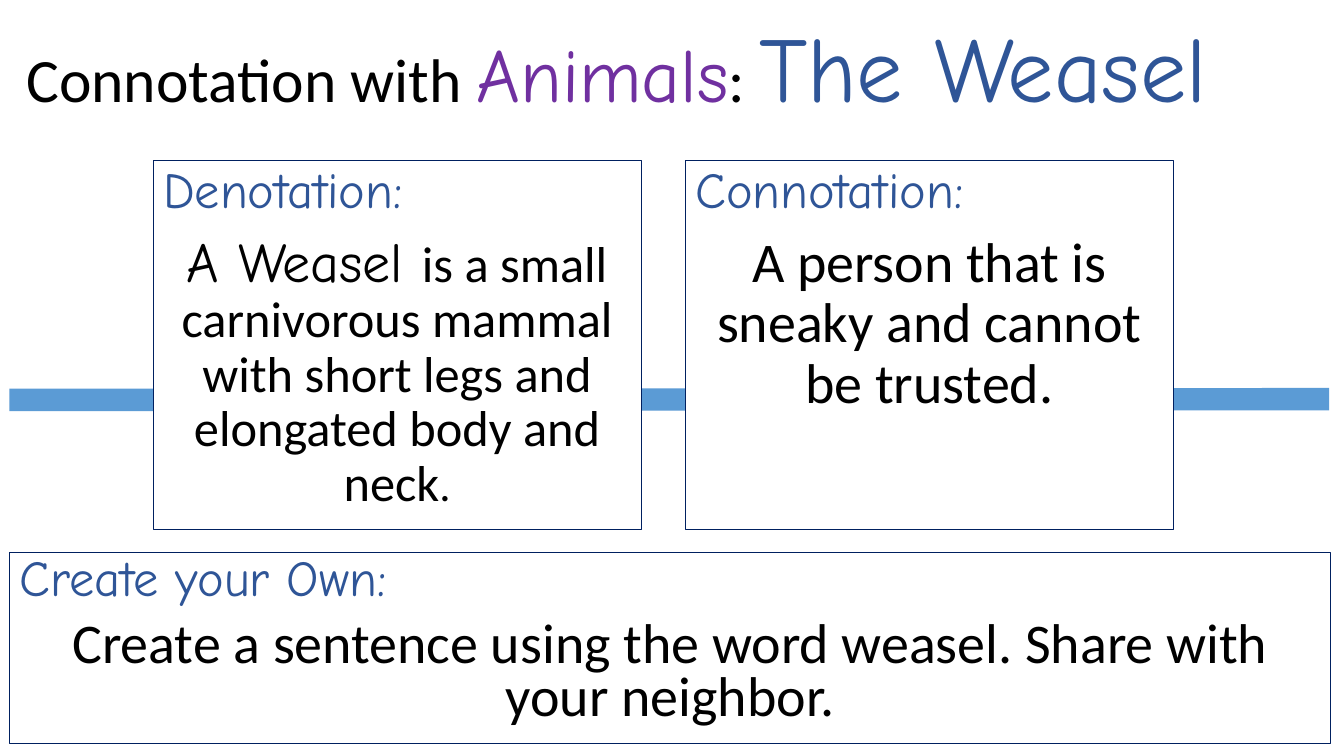
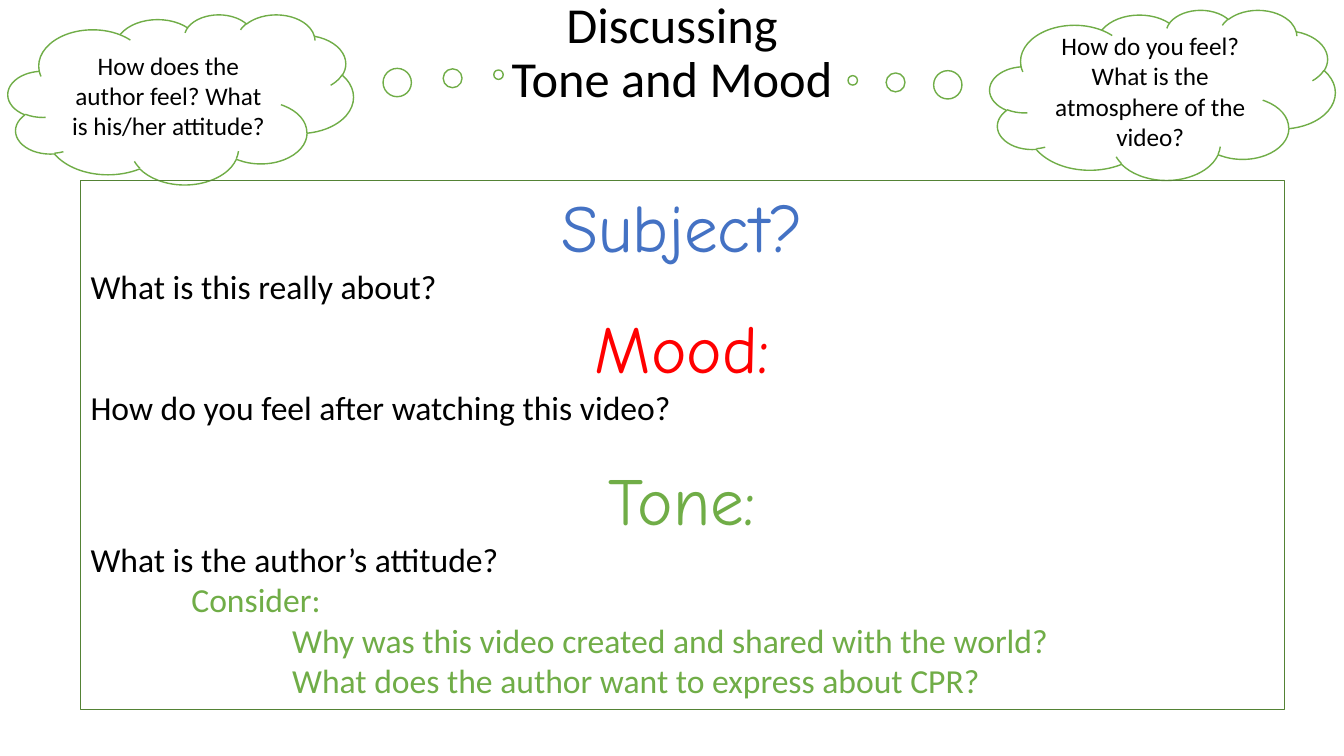
from lxml import etree
from pptx import Presentation
from pptx.dml.color import RGBColor
from pptx.enum.shapes import MSO_CONNECTOR, MSO_SHAPE
from pptx.enum.text import MSO_ANCHOR, MSO_AUTO_SIZE, PP_ALIGN
from pptx.oxml.ns import qn
from pptx.util import Inches, Pt

BLACK = RGBColor(0x00, 0x00, 0x00)
WHITE = RGBColor(0xFF, 0xFF, 0xFF)
NAVY = RGBColor(0x00, 0x20, 0x60)
DEEP_BLUE = RGBColor(0x2F, 0x55, 0x97)
BLUE = RGBColor(0x44, 0x72, 0xC4)
SKY = RGBColor(0x5B, 0x9B, 0xD5)
PURPLE = RGBColor(0x70, 0x30, 0xA0)
RED = RGBColor(0xFF, 0x00, 0x00)
GREEN = RGBColor(0x70, 0xAD, 0x47)
DARK_GREEN = RGBColor(0x54, 0x82, 0x35)
PLAIN, COMIC = "Calibri", "Comic Neue"
LEFT, CENTER = PP_ALIGN.LEFT, PP_ALIGN.CENTER

prs = Presentation()
prs.slide_width, prs.slide_height = Inches(13.33), Inches(7.5)
# The grid has 100 columns and 100 rows
COL, ROW = prs.slide_width / 100, prs.slide_height / 100


def place(sp, x, y, w, h, fill=None, line=None, width=0.75):
    """Set a shape on the grid; give it an outline and fill if it has a line."""
    sp.left, sp.top = int(x * COL), int(y * ROW)
    sp.width, sp.height = int(w * COL), int(h * ROW)
    tf = sp.text_frame
    tf.word_wrap, tf.auto_size = True, MSO_AUTO_SIZE.NONE
    tf.vertical_anchor = MSO_ANCHOR.MIDDLE
    if line is not None:
        sp.shadow.inherit = False
        sp.line.color.rgb, sp.line.width = line, Pt(width)
        if fill is None:
            sp.fill.background()
        else:
            sp.fill.solid()
            sp.fill.fore_color.rgb = fill
    return tf


def write(tf, i, runs, align=LEFT, spacing=1.0, before=0, indent=0):
    """Write paragraph i from runs of (text, size, font, colour)."""
    p = tf.paragraphs[0] if i == 0 else tf.add_paragraph()
    p.alignment, p.line_spacing = align, spacing
    if i and before:
        p.space_before = Pt(before)
    if indent:
        p._p.get_or_add_pPr().set("marL", str(Inches(indent)))
    for text, size, name, color in runs:
        r = p.add_run()
        r.text = text
        font = p.font if len(runs) == 1 else r.font
        font.size, font.name, font.color.rgb = Pt(size), name, color


# Slide 1: denotation and connotation
s = prs.slides.add_slide(prs.slide_layouts[5])
tf = place(s.shapes.title, 1.2, 0, 98.3, 19.3)
write(tf, 0, [("Connotation with ", 44, PLAIN, BLACK), ("Animals", 54, COMIC, PURPLE),
              (": ", 44, PLAIN, BLACK), ("The Weasel", 66, COMIC, DEEP_BLUE)], spacing=0.9)

# Band behind the cards
band = s.shapes.add_connector(MSO_CONNECTOR.STRAIGHT, int(0.7 * COL), int(52.9 * ROW),
                              int(98.9 * COL), int(52.8 * ROW))
band.line.color.rgb, band.line.width = SKY, Pt(16)
etree.SubElement(band._element.spPr, qn("a:effectLst"))

# Cards: two side by side and a wide one below
CARD_X, CARD_W, GAP = 11.4, 36.3, 3.3
cards = [
    ("Denotation:", (CARD_X, 21.2, CARD_W, 48.8), 0.9,
     [("A Weasel ", 40, COMIC, BLACK),
      ("is a small carnivorous mammal with short legs and elongated body and neck",
       36, PLAIN, BLACK), (".", 32, PLAIN, BLACK)]),
    ("Connotation:", (CARD_X + CARD_W + GAP, 21.2, CARD_W, 48.8), 0.9,
     [("A person that is sneaky and cannot be trusted.", 40, PLAIN, BLACK)]),
    ("Create your Own:", (0.7, 73.1, 98.3, 25.2), 0.8,
     [("Create a sentence using the word weasel. Share with your neighbor.",
       40, PLAIN, BLACK)]),
]
for head, box, spacing, runs in cards:
    sp = s.shapes.add_shape(MSO_SHAPE.RECTANGLE, 0, 0, 0, 0)
    tf = place(sp, *box, fill=WHITE, line=NAVY)
    tf.vertical_anchor = MSO_ANCHOR.TOP
    write(tf, 0, [(head, 36, COMIC, DEEP_BLUE)], spacing=spacing)
    write(tf, 1, runs, CENTER, spacing, before=10)

# Slide 2: tone and mood
s = prs.slides.add_slide(prs.slide_layouts[5])
tf = place(s.shapes.title, 0, 1.3, 100, 11.7)
write(tf, 0, [("Discussing\vTone and Mood", 36, PLAIN, BLACK)], CENTER, 0.9)
# A line break inside the title
tf.paragraphs[0].text = "Discussing\vTone and Mood"

# Thought clouds that point at the title
clouds = [
    ("How does the author feel? What is his/her attitude?", 0.6, 1.9, (0.92, -0.145)),
    ("How do you feel? What is the atmosphere of the video?", 73.65, 1.3, (-0.897, -0.085)),
]
for text, x, y, tail in clouds:
    sp = s.shapes.add_shape(MSO_SHAPE.CLOUD_CALLOUT, 0, 0, 0, 0)
    sp.adjustments[0], sp.adjustments[1] = tail
    tf = place(sp, x, y, 25.7, 22.5, fill=WHITE, line=GREEN, width=1)
    write(tf, 0, [(text, 18, PLAIN, BLACK)], CENTER)

# Discussion questions
sp = s.shapes.add_shape(MSO_SHAPE.RECTANGLE, 0, 0, 0, 0)
tf = place(sp, 6, 23.9, 89.55, 70, line=DARK_GREEN)
tf.vertical_anchor = MSO_ANCHOR.TOP
topics = [
    ("Subject?", BLUE, "What is this really about?", 0),
    ("Mood:", RED, "How do you feel after watching this video?", 0),
    ("Tone:", GREEN, "What is the author’s attitude?", 22),
]
for i, (head, color, question, before) in enumerate(topics):
    write(tf, 2 * i, [(head, 48, COMIC, color)], CENTER, before=before)
    write(tf, 2 * i + 1, [(question, 24, PLAIN, BLACK)])
prompts = [
    ("Consider:", 1),
    ("Why was this video created and shared with the world?", 2),
    ("What does the author want to express about CPR?", 2),
]
for i, (text, indent) in enumerate(prompts, 2 * len(topics)):
    write(tf, i, [(text, 24, PLAIN, GREEN)], indent=indent)

prs.save("out.pptx")
